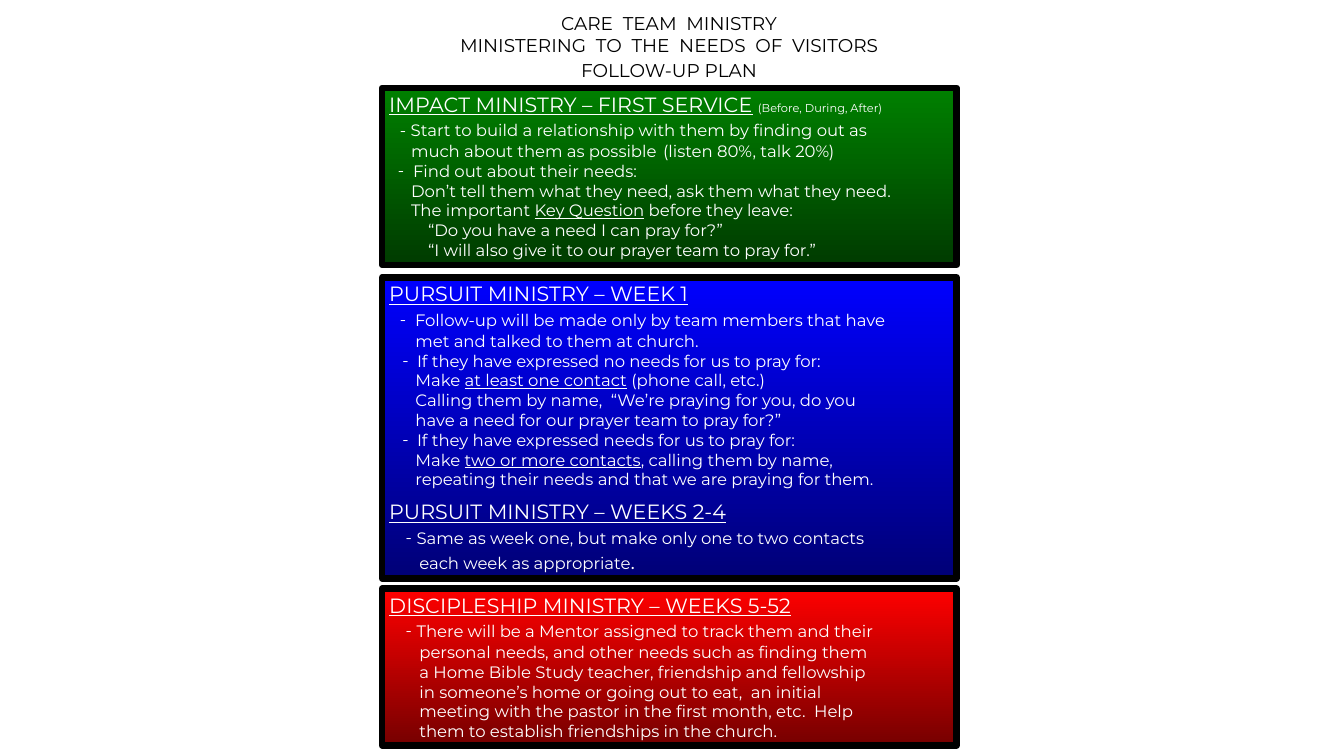
from lxml.etree import SubElement
from pptx import Presentation
from pptx.dml.color import RGBColor
from pptx.enum.shapes import MSO_SHAPE as Preset
from pptx.enum.text import MSO_ANCHOR as Anchor, MSO_AUTO_SIZE as AutoSize, PP_ALIGN as Align
from pptx.oxml.ns import qn
from pptx.util import Cm, Pt

FACE = "Montserrat"
TITLE, HEAD, BODY, NOTE = 13.2, 14.7, 11.8, 8.1
PANEL_LEFT, PANEL_WIDTH = 9.63, 14.48

# Line styles: dash position (None for no dash) and text position, in cm
HEADING = (None, 0)
GREEN_FIRST, GREEN_NEXT = (0.27, 0.54), (0.22, 0.6)
GREEN_TEXT, QUOTE = (None, 0.55), (None, 0.98)
BLUE_FIRST, BLUE_NEXT, BLUE_TEXT = (0.27, 0.65), (0.33, 0.7), (None, 0.66)
DEEP_FIRST, DEEP_TEXT = (0.41, 0.69), (None, 0.76)

# Underscores enclose underlined words; a list holds (text, size) pieces
IMPACT = [
    (HEADING, [("_IMPACT MINISTRY – FIRST SERVICE_ ", HEAD), ("(Before, During, After)", NOTE)]),
    (GREEN_FIRST, "Start to build a relationship with them by finding out as"),
    (GREEN_TEXT, "much about them as possible\t(listen 80%, talk 20%)"),
    (GREEN_NEXT, "Find out about their needs:"),
    (GREEN_TEXT, "Don’t tell them what they need, ask them what they need."),
    (GREEN_TEXT, "The important _Key Question_ before they leave:"),
    (QUOTE, "“Do you have a need I can pray for?”"),
    (QUOTE, "“I will also give it to our prayer team to pray for.”"),
]
PURSUIT = [
    (HEADING, "_PURSUIT MINISTRY – WEEK 1_"),
    (BLUE_FIRST, "Follow-up will be made only by team members that have"),
    (BLUE_TEXT, "met and talked to them at church."),
    (BLUE_NEXT, "If they have expressed no needs for us to pray for:"),
    (BLUE_TEXT, "Make _at least one contact_ (phone call, etc.)"),
    (BLUE_TEXT, "Calling them by name,  “We’re praying for you, do you"),
    (BLUE_TEXT, "have a need for our prayer team to pray for?”"),
    (BLUE_NEXT, "If they have expressed needs for us to pray for:"),
    (BLUE_TEXT, "Make _two or more contacts_, calling them by name,"),
    (BLUE_TEXT, "repeating their needs and that we are praying for them."),
    (HEADING, "_PURSUIT MINISTRY – WEEKS 2-4_"),
    (DEEP_FIRST, "Same as week one, but make only one to two contacts"),
    (DEEP_TEXT, [("each week as appropriate", BODY), (".", HEAD)]),
]
DISCIPLESHIP = [
    (HEADING, "_DISCIPLESHIP MINISTRY – WEEKS 5-52_"),
    (DEEP_FIRST, "There will be a Mentor assigned to track them and their"),
    (DEEP_TEXT, "personal needs, and other needs such as finding them"),
    (DEEP_TEXT, "a Home Bible Study teacher, friendship and fellowship"),
    (DEEP_TEXT, "in someone’s home or going out to eat,  an initial"),
    (DEEP_TEXT, "meeting with the pastor in the first month, etc.  Help"),
    (DEEP_TEXT, "them to establish friendships in the church."),
]


def color(value):
    return RGBColor.from_string(value)


def set_format(target, values):
    for key, value in values.items():
        setattr(target, key, value)


def set_frame(frame, wrap):
    set_format(frame, dict(
        word_wrap=wrap, auto_size=AutoSize.SHAPE_TO_FIT_TEXT, vertical_anchor=Anchor.TOP,
        margin_left=Cm(0.18), margin_right=Cm(0.18), margin_top=Cm(0.1), margin_bottom=Cm(0.1)))


def next_paragraph(frame, index):
    return frame.add_paragraph() if index else frame.paragraphs[0]


def add_runs(paragraph, text, size, ink):
    for index, piece in enumerate(text.split("_")):
        if piece:
            run = paragraph.add_run()
            run.text = piece
            set_format(run.font, dict(name=FACE, size=Pt(size), underline=index % 2 == 1))
            run.font.color.rgb = color(ink)


def set_indent(paragraph, dash, left, has_tab):
    properties = paragraph._p.get_or_add_pPr()
    properties.set("marL", str(Cm(left)))
    properties.set("indent", str(Cm(dash - left) if dash is not None else 0))
    if dash is None:
        SubElement(properties, qn("a:buNone"))
    else:
        SubElement(properties, qn("a:buFont"), typeface=FACE)
        SubElement(properties, qn("a:buChar"), char="-")
    if has_tab:
        tabs = SubElement(properties, qn("a:tabLst"))
        SubElement(tabs, qn("a:tab"), pos=str(Cm(7.07)), algn="l")


def add_title(slide, left, top, width, height):
    box = slide.shapes.add_textbox(Cm(left), Cm(top), Cm(width), Cm(height))
    set_frame(box.text_frame, False)
    lines = ["CARE  TEAM  MINISTRY", "MINISTERING  TO  THE  NEEDS  OF  VISITORS", "FOLLOW-UP PLAN"]
    for index, line in enumerate(lines):
        paragraph = next_paragraph(box.text_frame, index)
        paragraph.alignment = Align.CENTER
        add_runs(paragraph, line, TITLE, "000000")
    paragraph.space_before = Pt(1.8)


def add_panel(slide, top, height, shades, lines, body_align=Align.LEFT):
    panel = slide.shapes.add_shape(
        Preset.RECTANGLE, Cm(PANEL_LEFT), Cm(top), Cm(PANEL_WIDTH), Cm(height))
    panel.shadow.inherit = False

    # Downward gradient and heavy border
    panel.fill.gradient()
    panel.fill.gradient_angle = 270
    for stop, shade in zip(panel.fill.gradient_stops, shades):
        stop.color.rgb = color(shade)
    panel.line.color.rgb = color("000000")
    panel.line.width = Pt(4.5)

    # Headings, dashed points and their continuation lines
    set_frame(panel.text_frame, True)
    previous = None
    for index, (style, content) in enumerate(lines):
        paragraph = next_paragraph(panel.text_frame, index)
        is_heading = style == HEADING
        pieces = content if isinstance(content, list) else [(content, HEAD if is_heading else BODY)]
        set_indent(paragraph, *style, has_tab="\t" in pieces[0][0])
        paragraph.alignment = Align.LEFT if is_heading else body_align
        if is_heading and index:
            paragraph.space_before = Pt(7.2)
        elif previous == HEADING:
            set_format(paragraph, dict(space_before=Pt(2.8), space_after=Pt(0.7)))
        for text, size in pieces:
            add_runs(paragraph, text, size, "FFFFFF")
        previous = style


def main():
    deck = Presentation()
    set_format(deck, dict(slide_width=Cm(33.87), slide_height=Cm(19.05)))
    slide = deck.slides.add_slide(deck.slide_layouts[6])
    add_title(slide, 10.74, 0.2, 12.24, 1.96)
    add_panel(slide, 2.21, 4.47, ("008000", "003B00"), IMPACT)
    add_panel(slide, 6.99, 7.59, ("0000FF", "000076"), PURSUIT)
    add_panel(slide, 14.83, 3.96, ("FF0000", "760000"), DISCIPLESHIP, Align.JUSTIFY)
    deck.save("out.pptx")


if __name__ == "__main__":
    main()
